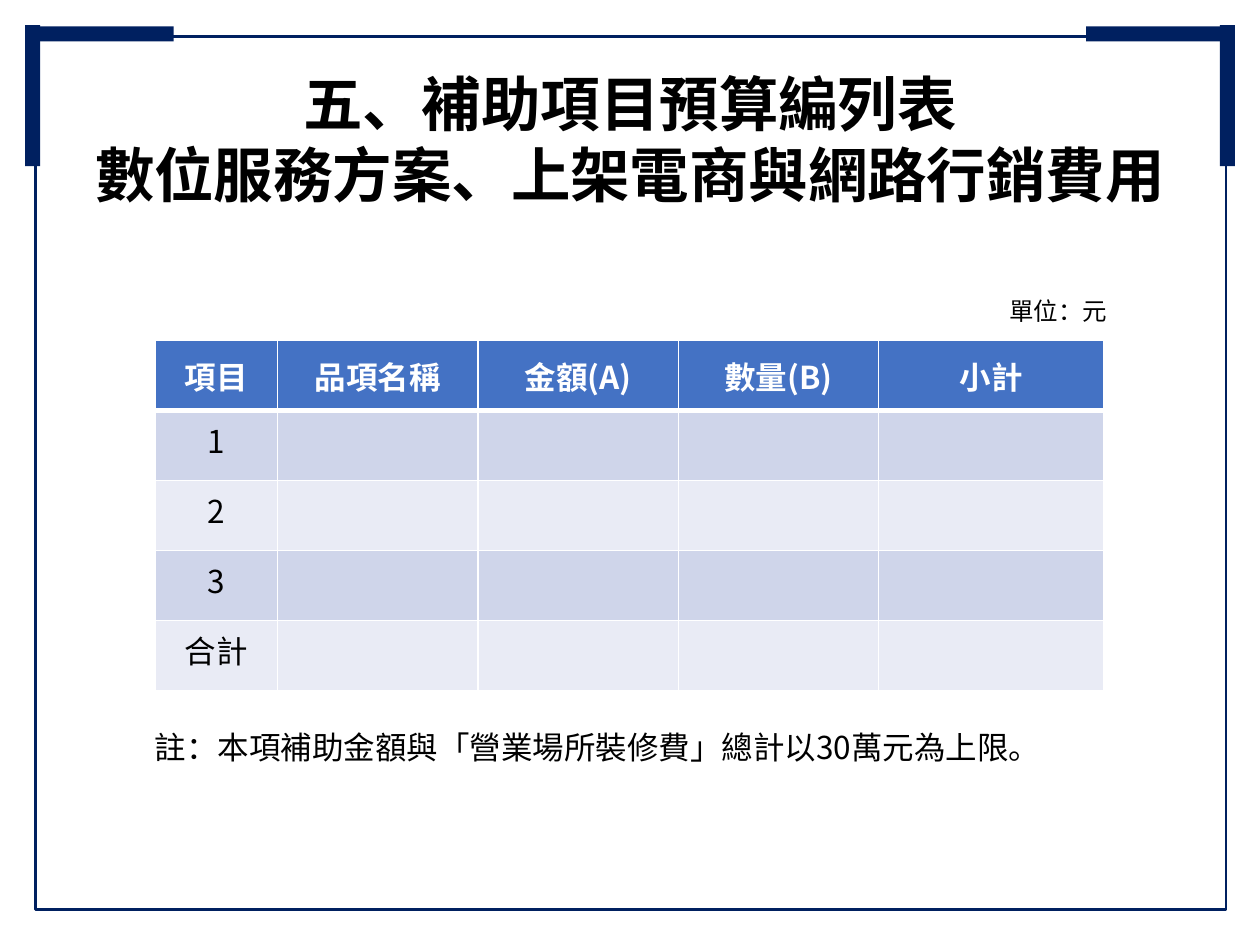
from dataclasses import dataclass

from lxml.etree import SubElement
from pptx import Presentation
from pptx.dml.color import RGBColor
from pptx.enum.shapes import MSO_SHAPE
from pptx.enum.text import MSO_ANCHOR, MSO_AUTO_SIZE, PP_ALIGN
from pptx.oxml.ns import qn
from pptx.util import Pt


@dataclass(frozen=True)
class Theme:
    font: str = "Noto Sans CJK SC"
    navy: str = "002060"
    black: str = "000000"
    white: str = "FFFFFF"
    header: str = "4472C4"
    bands: tuple = ("CFD5EA", "E9EBF5")
    title_size: int = 34
    text_size: int = 18
    unit_size: int = 14


THEME = Theme()
PAGE_WIDTH, PAGE_HEIGHT = 720, 540


def color(value):
    return RGBColor.from_string(value)


def write(frame, text, *, size=THEME.text_size, ink=THEME.black, bold=False,
          align=PP_ALIGN.LEFT, spacing=None):
    """Fill a text frame, one paragraph for each line of text."""
    for index, line in enumerate(text.split("\n")):
        para = frame.paragraphs[0] if index == 0 else frame.add_paragraph()
        para.alignment = align
        if spacing:
            para.line_spacing = spacing
        span = para.add_run()
        span.text = line
        span.font.name = THEME.font
        span.font.size = Pt(size)
        span.font.bold = bold
        span.font.color.rgb = color(ink)
        east_asian = SubElement(span.font._element, qn("a:ea"))
        east_asian.set("typeface", THEME.font)


def add_rectangle(page, left, top, width, height, *, fill=None, line=None):
    box = page.shapes.add_shape(MSO_SHAPE.RECTANGLE, Pt(left), Pt(top),
                                Pt(width), Pt(height))
    box.shadow.inherit = False
    if fill:
        box.fill.solid()
        box.fill.fore_color.rgb = color(fill)
    else:
        box.fill.background()
    if line:
        box.line.color.rgb = color(line)
        box.line.width = Pt(1.5)
    else:
        box.line.fill.background()


def add_frame(page):
    add_rectangle(page, 20.2, 20.9, 680.4, 499, line=THEME.navy)
    long, thick = 80.6, 8.6
    # Each corner bracket is one horizontal and one vertical bar
    for inset, top, width, height in ((18.7, 15.1, long, thick),
                                      (14.4, 14.4, thick, long)):
        for left in (inset, PAGE_WIDTH - inset - width):
            add_rectangle(page, left, top, width, height, fill=THEME.navy)


def add_title(page, text):
    title = page.shapes.title
    title.left, title.top, title.width, title.height = Pt(36), Pt(42.5), Pt(648), Pt(72.7)
    frame = title.text_frame
    frame.auto_size = MSO_AUTO_SIZE.NONE
    frame.vertical_anchor = MSO_ANCHOR.MIDDLE
    write(frame, text, size=THEME.title_size, bold=True,
          align=PP_ALIGN.CENTER, spacing=Pt(41))


def add_text(page, text, left, top, width, height, *, wrap=True, indent=0, **style):
    box = page.shapes.add_textbox(Pt(left), Pt(top), Pt(width), Pt(height))
    frame = box.text_frame
    frame.word_wrap = wrap
    frame.auto_size = MSO_AUTO_SIZE.SHAPE_TO_FIT_TEXT
    write(frame, text, **style)
    if indent:
        properties = frame.paragraphs[0]._p.get_or_add_pPr()
        properties.set("marL", str(Pt(indent)))
        properties.set("indent", str(-Pt(indent)))


def set_borders(cell, **widths):
    properties = cell._tc.get_or_add_tcPr()
    for position, (side, width) in enumerate(widths.items()):
        line = SubElement(properties, qn(f"a:{side}"), w=str(Pt(width)))
        fill = SubElement(line, qn("a:solidFill"))
        SubElement(fill, qn("a:srgbClr"), val=THEME.white)
        properties.insert(position, line)


def add_budget_table(page, headings, labels):
    widths = (69.8, 114.5, 114.5, 114.5, 128.9)
    row_height = 40
    rows = [headings] + [[label] + [""] * (len(headings) - 1) for label in labels]
    table = page.shapes.add_table(len(rows), len(headings), Pt(88.8), Pt(194.6),
                                  Pt(sum(widths)), Pt(row_height * len(rows))).table
    for column, width in zip(table.columns, widths):
        column.width = Pt(width)
    for index, texts in enumerate(rows):
        table.rows[index].height = Pt(row_height)
        is_header = index == 0
        for cell, text in zip(table.rows[index].cells, texts):
            cell.fill.solid()
            band = THEME.bands[(index - 1) % 2]
            cell.fill.fore_color.rgb = color(THEME.header if is_header else band)
            set_borders(cell, lnL=1, lnR=1, lnT=3 if index == 1 else 1,
                        lnB=3 if is_header else 1)
            if is_header:
                cell.vertical_anchor = MSO_ANCHOR.MIDDLE
            if text:
                write(cell.text_frame, text, bold=is_header, align=PP_ALIGN.CENTER,
                      ink=THEME.white if is_header else THEME.black)


def main():
    deck = Presentation()
    deck.slide_width, deck.slide_height = Pt(PAGE_WIDTH), Pt(PAGE_HEIGHT)
    page = deck.slides.add_slide(deck.slide_layouts.get_by_name("Title Only"))

    # Border and heading
    add_frame(page)
    add_title(page, "五、補助項目預算編列表\n數位服務方案、上架電商與網路行銷費用")

    # Budget table with its unit and note
    add_budget_table(page, ["項目", "品項名稱", "金額(A)", "數量(B)", "小計"],
                     ["1", "2", "3", "合計"])
    add_text(page, "註：本項補助金額與「營業場所裝修費」總計以30萬元為上限。",
             81.4, 418.3, 544.3, 23.8, wrap=False, indent=27.4, spacing=Pt(16))
    add_text(page, "單位：元", 569.5, 165.6, 140, 24.5, size=THEME.unit_size)

    deck.save("out.pptx")


if __name__ == "__main__":
    main()
